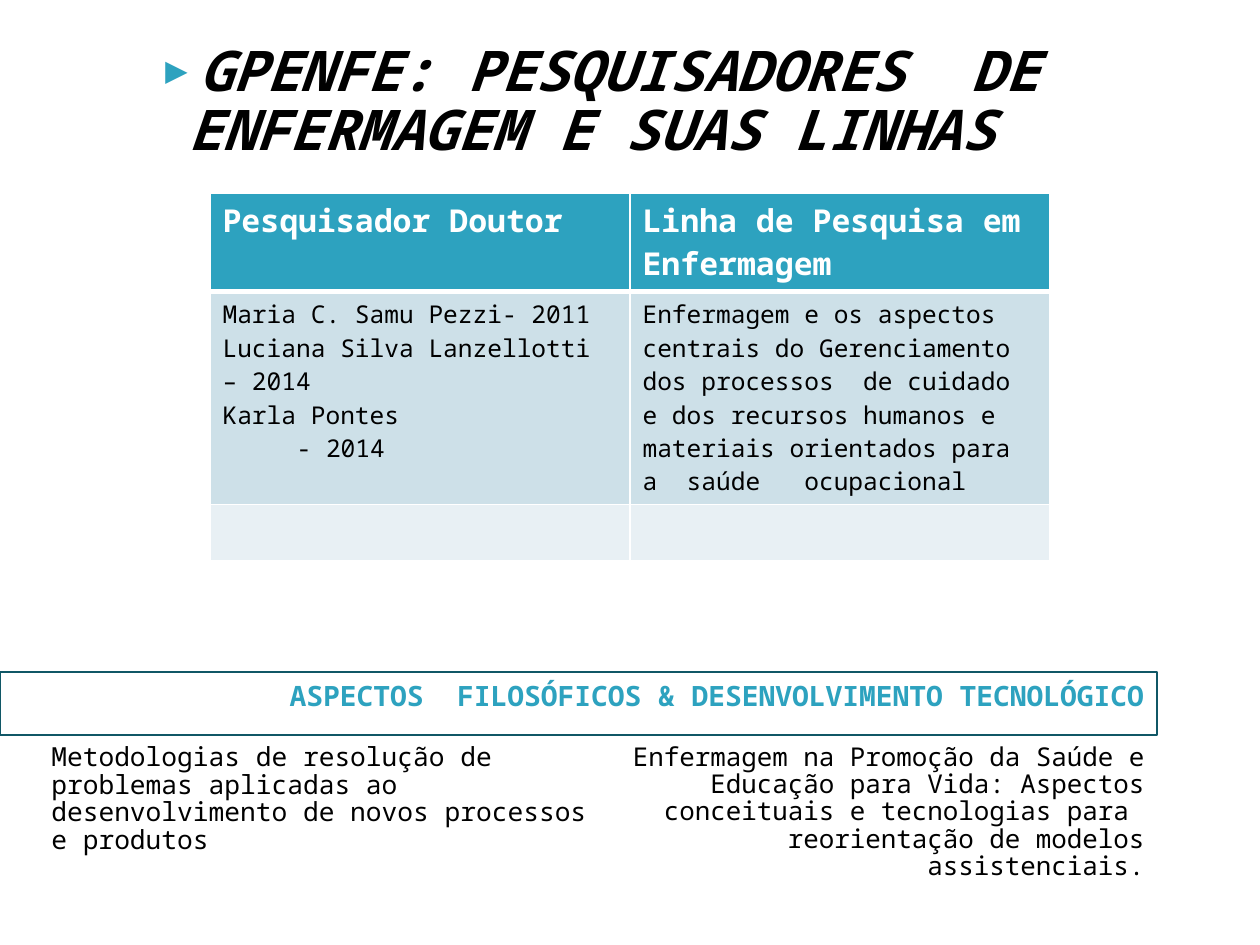
import pptx
import pptx.util
import pptx.dml.color
import pptx.enum.text
from lxml import etree
from pptx.oxml.ns import qn

PX = 914400 // 126
FONT = "Noto Sans Mono"
TIGHT = 0.88
COLOURS = {"accent": "2DA2BF", "outline": "105766", "text": "000000",
           "white": "FFFFFF", "band": "CDE0E8", "pale": "E8F0F4"}
ALIGN = pptx.enum.text.PP_ALIGN

THEME = "ASPECTOS  FILOSÓFICOS & DESENVOLVIMENTO TECNOLÓGICO"
HEADING = "GPENFE: PESQUISADORES  DE ENFERMAGEM E SUAS LINHAS"
METHODS = ("Metodologias de resolução de problemas aplicadas ao "
           "desenvolvimento de novos processos e produtos")
PROMOTION = ("Enfermagem na Promoção da Saúde e Educação para Vida: Aspectos "
             "conceituais e tecnologias para  reorientação de modelos assistenciais.")
HEADERS = ["Pesquisador Doutor", "Linha de Pesquisa em Enfermagem"]
RESEARCHERS = ["Maria C. Samu Pezzi- 2011", "Luciana Silva Lanzellotti – 2014",
               "Karla Pontes", "- 2014"]
RESEARCH_LINE = ("Enfermagem e os aspectos centrais do Gerenciamento  dos processos  "
                 "de cuidado e dos recursos humanos e materiais orientados para a  "
                 "saúde   ocupacional")
TABLE_ROWS = [
    {"cells": [[header] for header in HEADERS], "height": 98, "fill": "accent",
     "format": {"size": 18, "colour": "white", "bold": True}},
    {"cells": [RESEARCHERS, [RESEARCH_LINE]], "height": 212, "fill": "band",
     "format": {"size": 14}},
    {"cells": [[], []], "height": 56, "fill": "pale", "format": {}},
]


def rgb(name):
    return pptx.dml.color.RGBColor.from_string(COLOURS[name])


def place(shape, left, top, width, height):
    shape.left, shape.top, shape.width, shape.height = (
        value * PX for value in (left, top, width, height))


def write(frame, lines, size=18, colour="text", bold=False, italic=False,
          align=ALIGN.LEFT, spacing=None):
    """Fill a text frame with one paragraph per line, without bullets."""
    frame.word_wrap = True
    for index, line in enumerate(lines):
        para = frame.paragraphs[0] if index == 0 else frame.add_paragraph()
        para.alignment = align
        para.space_before = pptx.util.Pt(0)
        if spacing:
            para.line_spacing = spacing
        span = para.add_run()
        span.text = line
        span.font.name = FONT
        span.font.size = pptx.util.Pt(size)
        span.font.bold, span.font.italic = bold, italic
        span.font.color.rgb = rgb(colour)


def write_box(shape, text, bounds, **text_format):
    place(shape, *bounds)
    frame = shape.text_frame
    frame.auto_size = pptx.enum.text.MSO_AUTO_SIZE.NONE
    frame.vertical_anchor = pptx.enum.text.MSO_ANCHOR.TOP
    write(frame, [text], **text_format)


def set_indent(para, margin, hanging=0):
    properties = para._p.get_or_add_pPr()
    properties.set("marL", str(margin * PX))
    properties.set("indent", str(-hanging * PX))
    return properties


def set_bullet(para, char=None):
    """Give the paragraph a coloured bullet, or none."""
    properties = set_indent(para, 50 if char else 0, 35 if char else 0)
    if not char:
        etree.SubElement(properties, qn("a:buNone"))
        return
    colour = etree.SubElement(properties, qn("a:buClr"))
    etree.SubElement(colour, qn("a:srgbClr"), val=COLOURS["accent"])
    etree.SubElement(properties, qn("a:buSzPct"), val="68000")
    etree.SubElement(properties, qn("a:buFont"), typeface=FONT)
    etree.SubElement(properties, qn("a:buChar"), char=char)


def set_borders(cell, top, bottom):
    """Draw white cell borders; top and bottom are widths in points."""
    properties = cell._tc.get_or_add_tcPr()
    widths = {"a:lnL": 1, "a:lnR": 1, "a:lnT": top, "a:lnB": bottom}
    for index, (tag, width) in enumerate(widths.items()):
        line = etree.Element(qn(tag), w=str(pptx.util.Pt(width)))
        fill = etree.SubElement(line, qn("a:solidFill"))
        etree.SubElement(fill, qn("a:srgbClr"), val=COLOURS["white"])
        properties.insert(index, line)


def add_research_table(page):
    heights = [row["height"] for row in TABLE_ROWS]
    bounds = [value * PX for value in (210, 193, 840, sum(heights))]
    table = page.shapes.add_table(len(TABLE_ROWS), len(HEADERS), *bounds).table
    for row_index, row in enumerate(TABLE_ROWS):
        table.rows[row_index].height = row["height"] * PX
        for column, lines in enumerate(row["cells"]):
            cell = table.cell(row_index, column)
            cell.fill.solid()
            cell.fill.fore_color.rgb = rgb(row["fill"])
            set_borders(cell, top=3 if row_index == 1 else 1,
                        bottom=3 if row_index == 0 else 1)
            write(cell.text_frame, lines, **row["format"])
    set_indent(table.cell(1, 0).text_frame.paragraphs[-1], 74)


def main():
    deck = pptx.Presentation()
    deck.slide_width, deck.slide_height = 1260 * PX, 945 * PX
    page = deck.slides.add_slide(deck.slide_layouts.get_by_name("Two Content"))
    title = page.shapes.title
    promotion, heading = page.placeholders[1], page.placeholders[2]

    write_box(title, THEME, (0, 672, 1157, 63), size=16, colour="accent",
              bold=True, align=ALIGN.RIGHT)
    title.line.color.rgb = rgb("outline")
    title.line.width = pptx.util.Pt(0.75)

    write_box(promotion, PROMOTION, (609, 738, 548, 126), size=14.8,
              align=ALIGN.RIGHT, spacing=TIGHT)
    set_bullet(promotion.text_frame.paragraphs[0])

    write_box(heading, HEADING, (126, 38, 1031, 630), size=32, bold=True,
              italic=True, spacing=TIGHT)
    set_bullet(heading.text_frame.paragraphs[0], "▶")

    add_research_table(page)
    methods = page.shapes.add_textbox(0, 0, 0, 0)
    write_box(methods, METHODS, (39, 738, 571, 108), size=15, spacing=TIGHT)
    deck.save("out.pptx")


if __name__ == "__main__":
    main()
